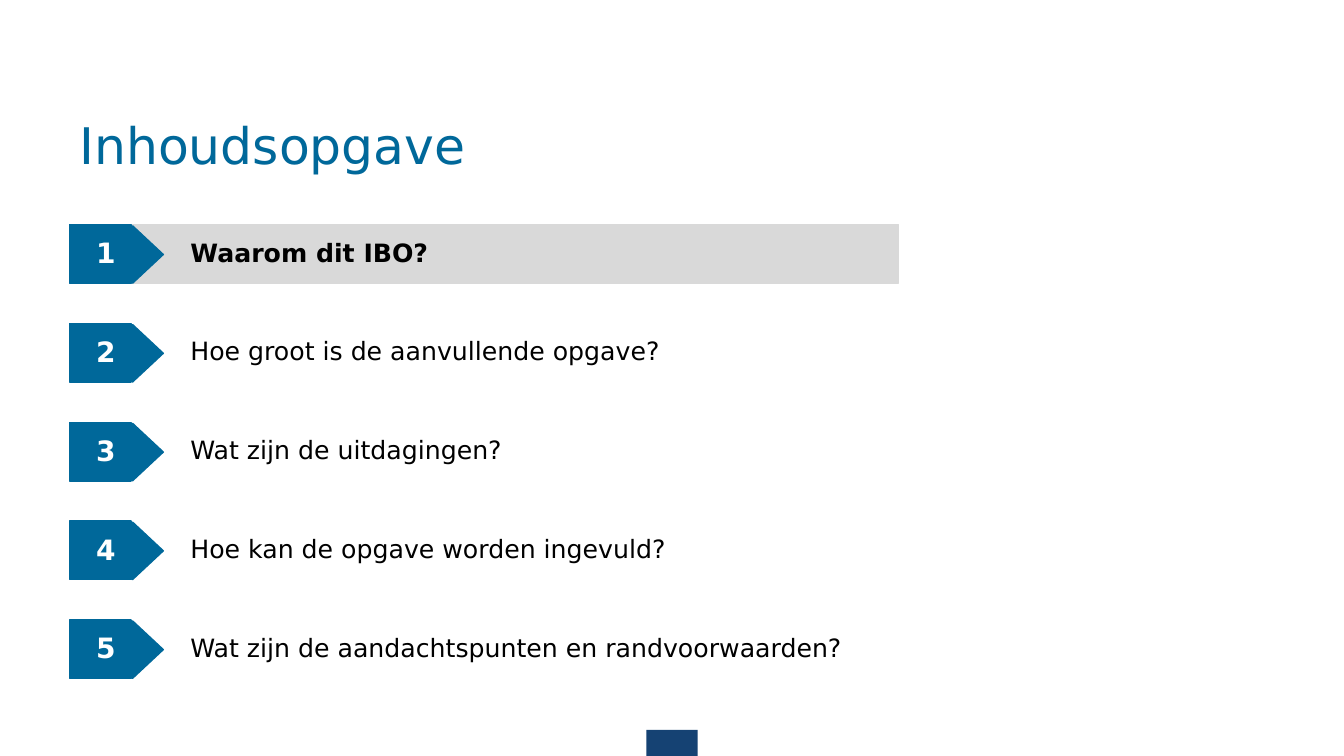
from dataclasses import dataclass

from pptx import Presentation
from pptx.dml.color import RGBColor
from pptx.enum.shapes import MSO_SHAPE
from pptx.enum.text import MSO_ANCHOR, PP_ALIGN
from pptx.util import Inches, Pt

RECT = MSO_SHAPE.RECTANGLE
PROCESS = MSO_SHAPE.FLOWCHART_PROCESS
DIAMOND = MSO_SHAPE.FLOWCHART_DECISION
TOP, MIDDLE = MSO_ANCHOR.TOP, MSO_ANCHOR.MIDDLE
LEFT, CENTER = PP_ALIGN.LEFT, PP_ALIGN.CENTER


@dataclass(frozen=True)
class Theme:
    font: str = "DejaVu Sans"
    blue: RGBColor = RGBColor(0x00, 0x68, 0x9A)
    navy: RGBColor = RGBColor(0x15, 0x42, 0x73)
    gray: RGBColor = RGBColor(0xD9, 0xD9, 0xD9)
    black: RGBColor = RGBColor(0, 0, 0)
    white: RGBColor = RGBColor(255, 255, 255)
    title: int = 36
    number: int = 20
    topic: int = 18


THEME = Theme()
TOPICS = [
    "Waarom dit IBO?",
    "Hoe groot is de aanvullende opgave?",
    "Wat zijn de uitdagingen?",
    "Hoe kan de opgave worden ingevuld?",
    "Wat zijn de aandachtspunten en randvoorwaarden?",
]
ACTIVE = 0
ROW_TOP, ROW_STEP, ROW_HEIGHT = 2.23, 0.98, 0.58


def add_block(shapes, kind, box, color, outline=True):
    block = shapes.add_shape(kind, *map(Inches, box))
    block.shadow.inherit = False
    block.fill.solid()
    block.fill.fore_color.rgb = color
    if outline:
        block.line.color.rgb = color
        block.line.width = Pt(1)
    else:
        block.line.fill.background()


def add_label(shapes, text, box, size, color, bold=False,
              align=LEFT, anchor=TOP, spacing=0.9):
    frame = shapes.add_textbox(*map(Inches, box)).text_frame
    frame.word_wrap = True
    frame.vertical_anchor = anchor
    line = frame.paragraphs[0]
    line.text = text
    line.alignment = align
    line.line_spacing = spacing
    font = line.font
    font.name, font.size, font.bold = THEME.font, Pt(size), bold
    font.color.rgb = color


def add_badge(shapes, number, top):
    """Add a numbered arrow made of a box and a diamond."""
    group = shapes.add_group_shape().shapes
    add_block(group, PROCESS, (0.69, top, 0.61, ROW_HEIGHT), THEME.blue)
    add_block(group, DIAMOND, (1.01, top + 0.01, 0.61, 0.57), THEME.blue)
    add_label(group, str(number), (0.79, top + 0.06, 0.52, 0.44),
              THEME.number, THEME.white, bold=True, align=CENTER, spacing=1.0)


def add_topic(shapes, index, text):
    top = ROW_TOP + index * ROW_STEP
    active = index == ACTIVE
    if active:
        add_block(shapes, RECT, (1.3, top, 7.61, ROW_HEIGHT), THEME.gray)
    add_badge(shapes, index + 1, top)
    width = 7.08 if active else 10.53
    add_label(shapes, text, (1.79, top - 0.08, width, 0.74),
              THEME.topic, THEME.black, bold=active, anchor=MIDDLE)


def main():
    deck = Presentation()
    deck.slide_width, deck.slide_height = Inches(13.33), Inches(7.5)
    shapes = deck.slides.add_slide(deck.slide_layouts[6]).shapes
    add_block(shapes, RECT, (6.41, 7.24, 0.51, 0.26), THEME.navy, outline=False)
    for index, text in enumerate(TOPICS):
        add_topic(shapes, index, text)
    add_label(shapes, "Inhoudsopgave", (0.69, 1.15, 11.95, 1.04),
              THEME.title, THEME.blue)
    deck.save("out.pptx")


if __name__ == "__main__":
    main()
